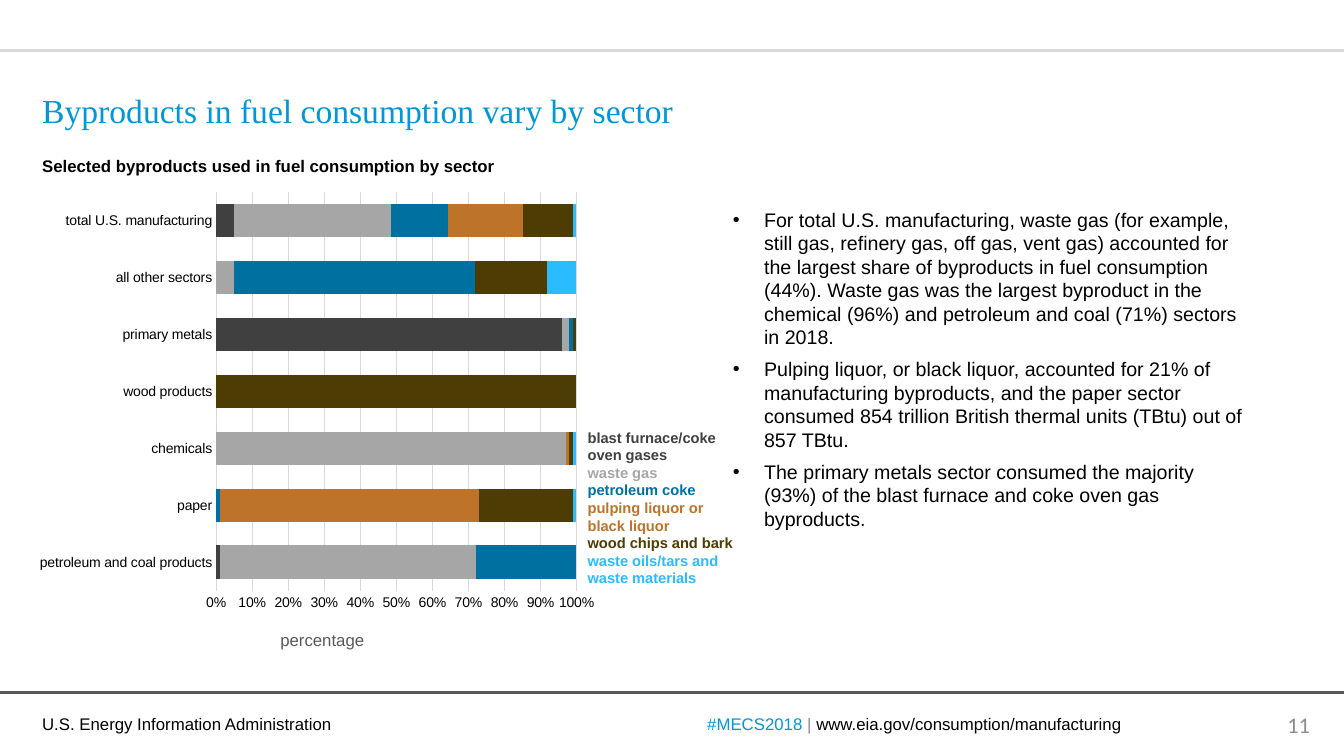
from lxml.etree import SubElement
from pptx import Presentation
from pptx.chart.data import CategoryChartData
from pptx.dml.color import RGBColor
from pptx.enum.chart import XL_CHART_TYPE, XL_TICK_MARK
from pptx.enum.shapes import MSO_CONNECTOR
from pptx.enum.text import MSO_ANCHOR, PP_ALIGN
from pptx.oxml import parse_xml
from pptx.oxml.ns import nsdecls, qn
from pptx.util import Inches, Pt

WIDTH, HEIGHT, MARGIN = 13.33, 7.5, 0.32
BLACK, BLUE, GRAY = "000000", "0096D7", "8C8C8C"
DARK_RULE, LIGHT_RULE = "595959", "D9D9D9"

TITLE = "Byproducts in fuel consumption vary by sector"
SUBTITLE = "Selected byproducts used in fuel consumption by sector"
AGENCY = "U.S. Energy Information Administration"
CREDIT = [("#MECS2018 ", BLUE), ("| ", GRAY),
          ("www.eia.gov/consumption/manufacturing", BLACK)]
FINDINGS = [
    "For total U.S. manufacturing, waste gas (for example, still gas, refinery gas, "
    "off gas, vent gas) accounted for the largest share of byproducts in fuel "
    "consumption (44%). Waste gas was the largest byproduct in the chemical (96%) "
    "and petroleum and coal (71%) sectors in 2018.",
    "Pulping liquor, or black liquor, accounted for 21% of manufacturing byproducts, "
    "and the paper sector consumed 854 trillion British thermal units (TBtu) out of "
    "857 TBtu.",
    "The primary metals sector consumed the majority (93%) of the blast furnace and "
    "coke oven gas byproducts.",
]
SECTORS = ["petroleum and coal products", "paper", "chemicals", "wood products",
           "primary metals", "all other sectors", "total U.S. manufacturing"]
BYPRODUCTS = [
    ("blast furnace/coke oven gases", "404040", (1, 0, 0, 0, 97, 0, 5)),
    ("waste gas", "A6A6A6", (71, 0, 97, 0, 2, 5, 44)),
    ("petroleum coke", "0070A1", (28, 1, 0, 0, 1, 66, 16)),
    ("pulping liquor or black liquor", "BD732A", (0, 72, 1, 0, 0, 0, 21)),
    ("wood chips and bark", "4D3C04", (None, 26, 1, 100, 1, 20, 14)),
    ("waste oils/tars and waste materials", "2ABCFF", (0, 1, 1, 0, None, 8, 1)),
]


def rgb(color):
    return RGBColor.from_string(color)


def set_font(font, size, color, name="Arial", bold=False):
    font.size, font.name, font.bold = Pt(size), name, bold
    font.color.rgb = rgb(color)


def add_text(slide, box, paragraphs, size, name="Arial", bold=False,
             align=PP_ALIGN.LEFT, anchor=MSO_ANCHOR.TOP):
    """Each paragraph is a list of (text, color) runs."""
    tf = slide.shapes.add_textbox(*map(Inches, box)).text_frame
    tf.word_wrap, tf.vertical_anchor = True, anchor
    for i, runs in enumerate(paragraphs):
        p = tf.add_paragraph() if i else tf.paragraphs[0]
        p.alignment = align
        for text, color in runs:
            r = p.add_run()
            r.text = text
            set_font(r.font, size, color, name, bold)
    return tf


def add_bullets(tf, indent, space):
    for p in tf.paragraphs:
        p.space_after = Pt(space)
        pPr = p._p.get_or_add_pPr()
        pPr.set("marL", str(Inches(indent)))
        pPr.set("indent", str(-Inches(indent)))
        SubElement(pPr, qn("a:buFont")).set("typeface", "Arial")
        SubElement(pPr, qn("a:buChar")).set("char", "•")


def add_rule(slide, y, color):
    line = slide.shapes.add_connector(MSO_CONNECTOR.STRAIGHT, 0, Inches(y),
                                      Inches(WIDTH), Inches(y))
    line.line.color.rgb, line.line.width = rgb(color), Pt(2.25)
    SubElement(line._element.spPr, qn("a:effectLst"))


def set_layout(parent, index, **shares):
    """Place a chart part by shares of the chart's size."""
    for old in parent.findall(qn("c:layout")):
        parent.remove(old)
    target = '<c:layoutTarget val="inner"/>' if "w" in shares else ""
    modes = "".join(f'<c:{k}Mode val="edge"/>' for k in "xy")
    sizes = "".join(f'<c:{k} val="{v}"/>' for k, v in shares.items())
    parent.insert(index, parse_xml(
        f'<c:layout {nsdecls("c")}><c:manualLayout>{target}{modes}{sizes}'
        "</c:manualLayout></c:layout>"))


def add_byproduct_chart(slide, box):
    data = CategoryChartData(number_format="#,##0")
    data.categories = SECTORS
    for name, _, values in BYPRODUCTS:
        data.add_series(name, values)
    chart = slide.shapes.add_chart(XL_CHART_TYPE.BAR_STACKED_100,
                                   *map(Inches, box), data).chart
    chart.has_legend = chart.has_title = False
    set_font(chart.font, 10, BLACK)

    plot = chart.plots[0]
    plot.gap_width, plot.overlap, plot.vary_by_categories = 70, 100, False
    for series, (_, color, _) in zip(plot.series, BYPRODUCTS):
        series.format.fill.solid()
        series.format.fill.fore_color.rgb = rgb(color)

    sectors, percent = chart.category_axis, chart.value_axis
    for axis in (sectors, percent):
        axis.major_tick_mark = axis.minor_tick_mark = XL_TICK_MARK.NONE
        set_font(axis.tick_labels.font, 10, BLACK)
    percent.format.line.fill.background()
    percent.has_major_gridlines = True
    for line in (sectors.format.line, percent.major_gridlines.format.line):
        line.color.rgb, line.width = rgb(LIGHT_RULE), Pt(0.75)
    percent.tick_labels.number_format = "0%"
    percent.tick_labels.number_format_is_linked = False

    r = percent.axis_title.text_frame.paragraphs[0].add_run()
    r.text = "percentage"
    set_font(r.font, 12, DARK_RULE)
    set_layout(percent.axis_title._element, 1, x=0.43, y=0.92)
    set_layout(chart._chartSpace.chart.plotArea, 0, x=0.324, y=0.02, w=0.625, h=0.826)


def main():
    prs = Presentation()
    prs.slide_width, prs.slide_height = Inches(WIDTH), Inches(HEIGHT)
    slide = prs.slides.add_slide(prs.slide_layouts[6])
    middle = {"align": PP_ALIGN.CENTER, "anchor": MSO_ANCHOR.MIDDLE}

    add_rule(slide, 0.5, LIGHT_RULE)
    add_rule(slide, 6.87, DARK_RULE)
    add_text(slide, (MARGIN, 0.51, 12.69, 0.83), [[(TITLE, BLUE)]], 24,
             "Times New Roman", anchor=MSO_ANCHOR.BOTTOM)
    add_text(slide, (MARGIN, 1.5, 5.17, 0.3), [[(SUBTITLE, BLACK)]], 12, bold=True)
    add_byproduct_chart(slide, (0.29, 1.81, 5.72, 4.79))
    add_text(slide, (5.73, 4.2, 1.65, 1.69),
             [[(name, color)] for name, color, _ in BYPRODUCTS], 10.5, bold=True)
    findings = add_text(slide, (7.17, 2.01, 5.31, 3.65),
                        [[(text, BLACK)] for text in FINDINGS], 14)
    add_bullets(findings, 0.31, 6)
    add_text(slide, (MARGIN, 7.03, 3.7, 0.3), [[(AGENCY, BLACK)]], 12)
    add_text(slide, (6.82, 6.98, 4.5, 0.4), [CREDIT], 12, **middle)
    add_text(slide, (12.58, 6.99, 0.6, 0.4), [[("11", GRAY)]], 16, "Calibri", **middle)
    prs.save("out.pptx")


if __name__ == "__main__":
    main()
